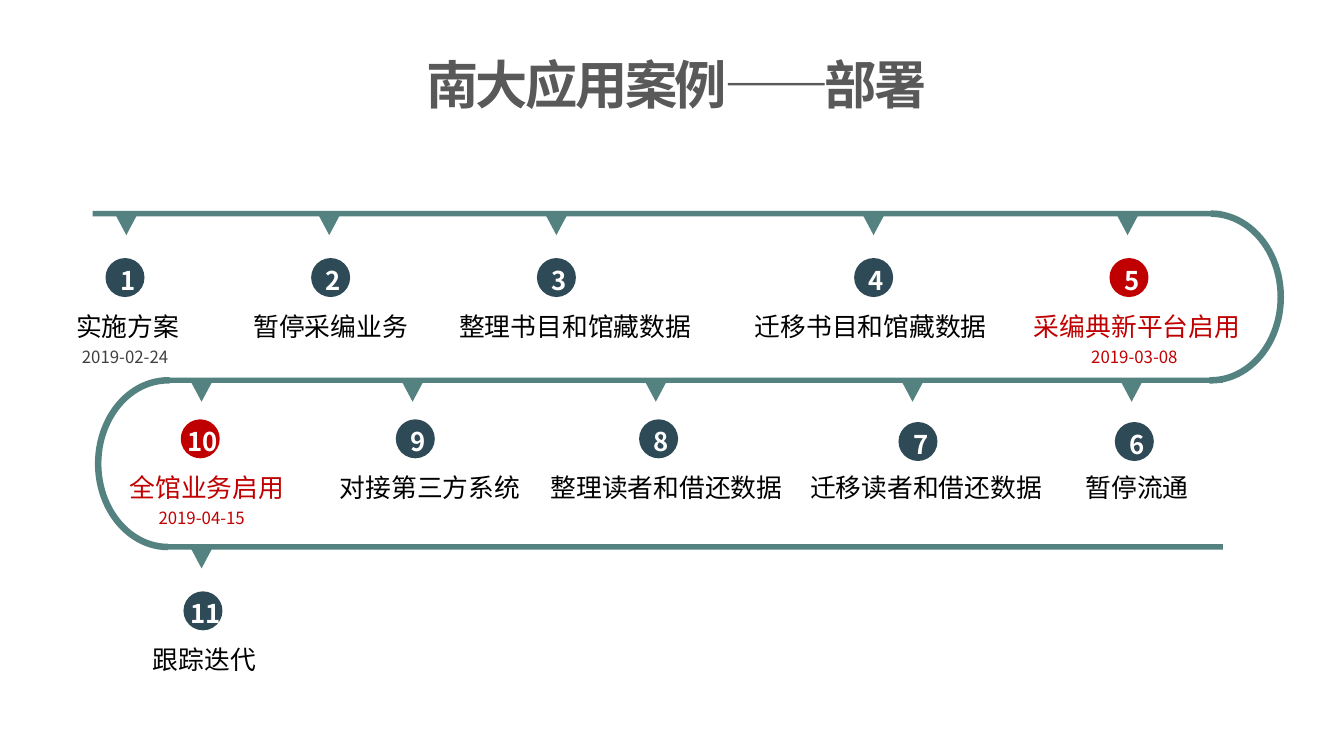
from dataclasses import dataclass

from lxml import etree
from pptx import Presentation
from pptx.dml.color import RGBColor
from pptx.enum.shapes import MSO_SHAPE
from pptx.enum.text import MSO_ANCHOR, MSO_AUTO_SIZE, PP_ALIGN
from pptx.oxml.ns import qn
from pptx.util import Inches, Pt

RECT, OVAL = MSO_SHAPE.RECTANGLE, MSO_SHAPE.OVAL
TRIANGLE, ARC = MSO_SHAPE.FLOWCHART_MERGE, MSO_SHAPE.ARC
CENTER, JUSTIFY = PP_ALIGN.CENTER, PP_ALIGN.JUSTIFY
TOP, NO_AUTOFIT = MSO_ANCHOR.TOP, MSO_AUTO_SIZE.NONE

TEAL = RGBColor(0x54, 0x82, 0x80)
NAVY = RGBColor(0x2F, 0x4A, 0x57)
RED = RGBColor(0xC0, 0x00, 0x00)
BLACK = RGBColor(0x00, 0x00, 0x00)
WHITE = RGBColor(0xFF, 0xFF, 0xFF)
DARK_GRAY = RGBColor(0x40, 0x40, 0x40)
TITLE_GRAY = RGBColor(0x59, 0x59, 0x59)

TITLE_FONT, BODY_FONT = "Open Sans", "Noto Sans CJK SC"
BODY_SIZE = 13.8
CHAR_W = BODY_SIZE / 72
INSETS = 0.2

SLIDE_W = 10
SLIDE_H = SLIDE_W * 9 / 16
TRACK_LEFT, TRACK_TOP = 0.69, 1.57
ROW_GAP = 1.24
RAIL_H = 0.04
MARKER_W, MARKER_H = 0.17, 0.16
BADGE = 0.29
TURN_W = 1.04


@dataclass
class Step:
    """Centres of the parts, measured from the left end of the track."""
    text: str
    marker: float
    badge: float
    label: float
    date: str = ""
    date_center: float = 0
    milestone: bool = False
    nudge: float = 0  # extra drop of the badge


@dataclass
class Row:
    rail_start: float
    rail_end: float
    badge_drop: float
    steps: list


ROWS = [
    Row(0, 8.4, 0.35, [
        Step("实施方案", 0.25, 0.24, 0.26, "2019-02-24", 0.24),
        Step("暂停采编业务", 1.76, 1.77, 1.77),
        Step("整理书目和馆藏数据", 3.45, 3.45, 3.59),
        Step("迁移书目和馆藏数据", 5.81, 5.81, 5.79),
        Step("采编典新平台启用", 7.7, 7.71, 7.77, "2019-03-08", 7.75, milestone=True),
    ]),
    Row(0.55, 8.41, 0.31, [
        Step("暂停流通", 7.73, 7.75, 7.77, nudge=0.02),
        Step("迁移读者和借还数据", 6.1, 6.14, 6.2, nudge=0.02),
        Step("整理读者和借还数据", 4.19, 4.21, 4.27),
        Step("对接第三方系统", 2.38, 2.4, 2.51),
        Step("全馆业务启用", 0.81, 0.8, 0.85, "2019-04-15", 0.81, milestone=True),
    ]),
    Row(0.53, 8.41, 0.35, [
        Step("跟踪迭代", 0.81, 0.82, 0.83),
    ]),
]


def write(sp, text, size=BODY_SIZE, color=BLACK, font=BODY_FONT, bold=False,
          align=CENTER, wrap=False, spacing=None):
    tf = sp.text_frame
    tf.auto_size = NO_AUTOFIT
    tf.word_wrap = wrap
    tf.vertical_anchor = TOP
    p = tf.paragraphs[0]
    p.alignment = align
    r = p.add_run()
    r.text = text
    r.font.size = Pt(size)
    r.font.bold = bold
    r.font.color.rgb = color
    r.font.name = font
    rPr = r._r.get_or_add_rPr()
    etree.SubElement(rPr, qn("a:ea")).set("typeface", BODY_FONT)
    if spacing is not None:
        rPr.set("spc", str(round(spacing * 100)))


def add_text(slide, center, top, width, height, text, **fmt):
    sp = slide.shapes.add_textbox(Inches(center - width / 2), Inches(top),
                                  Inches(width), Inches(height))
    write(sp, text, **fmt)


def add_filled(slide, kind, left, top, width, height, color):
    sp = slide.shapes.add_shape(kind, Inches(left), Inches(top),
                                Inches(width), Inches(height))
    sp.shadow.inherit = False
    sp.fill.solid()
    sp.fill.fore_color.rgb = color
    sp.line.fill.background()


def add_title(slide, left, top, width, height):
    title = slide.shapes.title
    title.left, title.top = Inches(left), Inches(top)
    title.width, title.height = Inches(width), Inches(height)
    write(title, "南大应用案例——部署", size=28, color=TITLE_GRAY, font=TITLE_FONT,
          bold=True, align=JUSTIFY, spacing=-1.3)


def add_turn(slide, left, top, rotation=0):
    """Half an ellipse that joins two neighbouring rails."""
    sp = slide.shapes.add_shape(ARC, Inches(left), Inches(top),
                                Inches(TURN_W), Inches(ROW_GAP))
    sp.adjustments[0], sp.adjustments[1] = 162, 54.62
    sp.rotation = rotation
    sp.shadow.inherit = False
    sp.fill.background()
    sp.line.color.rgb = TEAL
    sp.line.width = Pt(3.5)


def add_step(slide, left, top, badge_drop, number, step):
    add_filled(slide, TRIANGLE, left + step.marker - MARKER_W / 2, top + 0.02,
               MARKER_W, MARKER_H, TEAL)

    badge_top = top + badge_drop + step.nudge
    add_filled(slide, OVAL, left + step.badge - BADGE / 2, badge_top, BADGE, BADGE,
               RED if step.milestone else NAVY)
    digits = str(number)
    add_text(slide, left + step.badge + 0.02, badge_top,
             INSETS + 0.12 * len(digits), 0.33, digits, color=WHITE, bold=True)

    label_top = top + badge_drop + 0.34
    add_text(slide, left + step.label, label_top, INSETS + CHAR_W * len(step.text),
             0.33, step.text, color=RED if step.milestone else BLACK)
    if step.date:
        add_text(slide, left + step.date_center, label_top + 0.27, 0.92, 0.25,
                 step.date, size=9, color=RED if step.milestone else DARK_GRAY,
                 wrap=True)


def add_track(slide, left, top):
    rail_middle = top + RAIL_H / 2
    add_turn(slide, left + 7.8, rail_middle)
    add_turn(slide, left + 0.04, rail_middle + ROW_GAP, rotation=180)
    number = 1
    for i, row in enumerate(ROWS):
        row_top = top + i * ROW_GAP
        add_filled(slide, RECT, left + row.rail_start, row_top,
                   row.rail_end - row.rail_start, RAIL_H, TEAL)
        for step in row.steps:
            add_step(slide, left, row_top, row.badge_drop, number, step)
            number += 1


def main():
    prs = Presentation()
    prs.slide_width, prs.slide_height = Inches(SLIDE_W), Inches(SLIDE_H)
    slide = prs.slides.add_slide(prs.slide_layouts[5])
    add_title(slide, 3.07, 0.34, 3.95, 0.57)
    add_track(slide, TRACK_LEFT, TRACK_TOP)
    prs.save("out.pptx")


if __name__ == "__main__":
    main()
